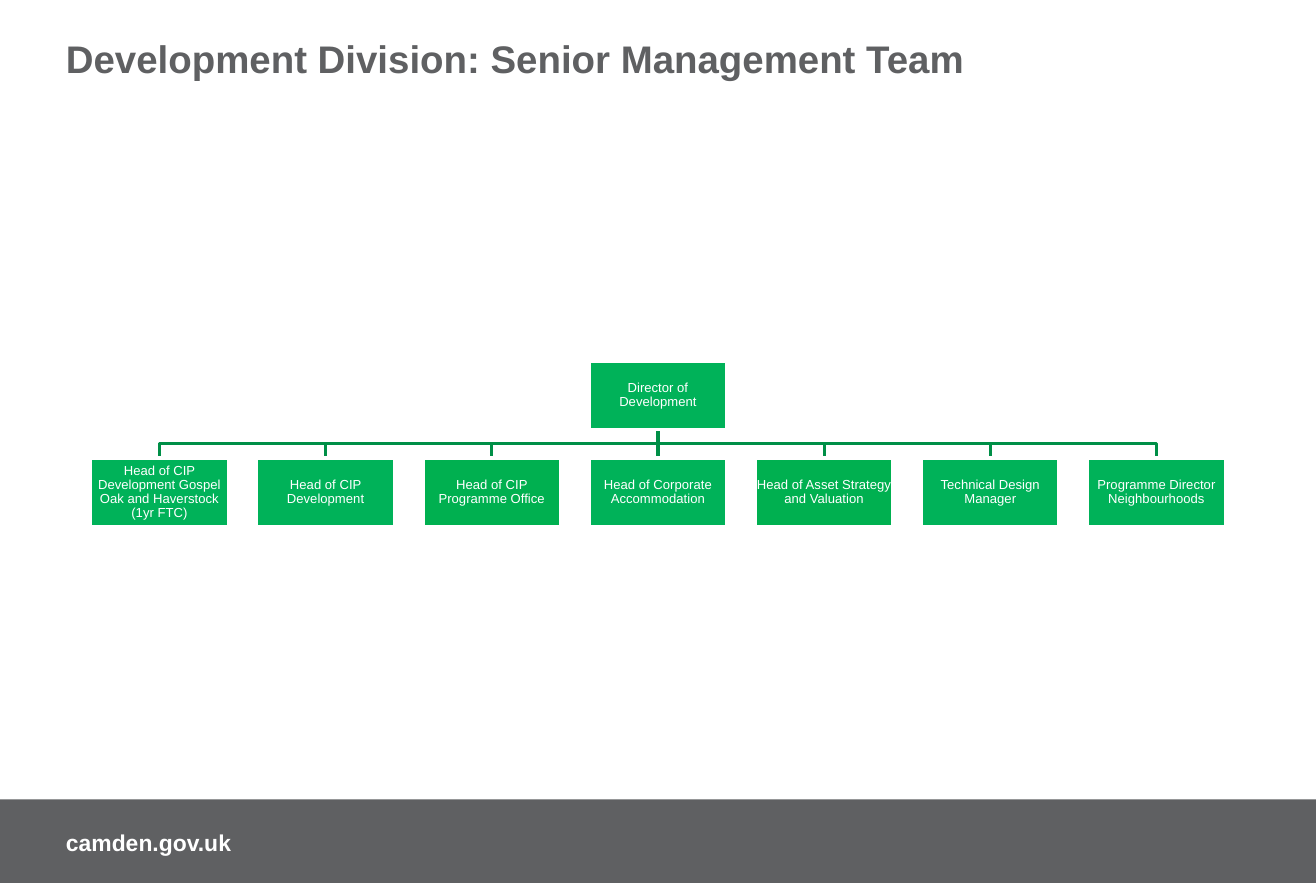
from lxml import etree
from pptx import Presentation
from pptx.dml.color import RGBColor
from pptx.enum.shapes import MSO_CONNECTOR, MSO_SHAPE
from pptx.enum.text import MSO_ANCHOR, MSO_AUTO_SIZE, PP_ALIGN
from pptx.oxml.ns import qn
from pptx.util import Inches, Pt

RECTANGLE = MSO_SHAPE.RECTANGLE
STRAIGHT = MSO_CONNECTOR.STRAIGHT
TOP, MIDDLE = MSO_ANCHOR.TOP, MSO_ANCHOR.MIDDLE
LEFT, CENTER = PP_ALIGN.LEFT, PP_ALIGN.CENTER
NO_AUTOFIT = MSO_AUTO_SIZE.NONE

SLIDE_W, SLIDE_H = 11.18, 7.5
GREY, WHITE = "5F6062", "FFFFFF"
GREEN, BRIGHT_GREEN, DARK_GREEN = "00B259", "00B050", "008F47"

MARGIN = 0.56
POST_W, POST_H = 1.17, 0.58
DIRECTOR_TOP, HEADS_TOP = 3.07, 3.89
FIRST_LEFT, LAST_LEFT = 0.77, 9.24

HEADS = [
    ("Head of CIP Development Gospel Oak and Haverstock (1yr FTC)", GREEN),
    ("Head of CIP Development", GREEN),
    ("Head of CIP Programme Office", BRIGHT_GREEN),
    ("Head of Corporate Accommodation", GREEN),
    ("Head of Asset Strategy and Valuation", BRIGHT_GREEN),
    ("Technical Design Manager", GREEN),
    ("Programme Director Neighbourhoods", GREEN),
]


def color(hex_value):
    return RGBColor.from_string(hex_value)


class OrgSlide:
    """Holds the slide and the chart's style."""

    font_name = "Arial"
    line_width = Pt(2)

    def __init__(self, slide):
        self.shapes = slide.shapes

    def set_text(self, shape, text, size, hex_value, bold=False,
                 align=LEFT, anchor=TOP, inset=0):
        frame = shape.text_frame
        frame.text = text
        frame.word_wrap = True
        frame.auto_size = NO_AUTOFIT
        frame.vertical_anchor = anchor
        frame.margin_left = frame.margin_right = Inches(inset)
        frame.margin_top = frame.margin_bottom = Inches(inset)
        paragraph = frame.paragraphs[0]
        paragraph.alignment = align
        font = paragraph.runs[0].font
        font.name = self.font_name
        font.size = Pt(size)
        font.bold = bold
        font.color.rgb = color(hex_value)
        return paragraph

    def title(self, text):
        title = self.shapes.title
        title.left, title.top = Inches(MARGIN), Inches(0.3)
        title.width, title.height = Inches(10.06), Inches(1.25)
        self.set_text(title, text, 23.5, GREY, bold=True)

    def rectangle(self, left, top, width, height, fill):
        box = self.shapes.add_shape(
            RECTANGLE, Inches(left), Inches(top), Inches(width), Inches(height))
        box.shadow.inherit = False
        box.fill.solid()
        box.fill.fore_color.rgb = color(fill)
        box.line.fill.background()
        return box

    def footer(self, address):
        self.rectangle(0, 6.79, SLIDE_W, SLIDE_H - 6.79, GREY)
        box = self.shapes.add_textbox(
            Inches(MARGIN), Inches(7.04), Inches(4.61), Inches(0.24))
        self.set_text(box, address, 14, WHITE, bold=True)

    def post(self, left, top, role, fill):
        box = self.rectangle(left, top, POST_W, POST_H, fill)
        self.stroke(box.line, WHITE)
        paragraph = self.set_text(box, role, 8, WHITE, align=CENTER,
                                  anchor=MIDDLE, inset=0.01)
        paragraph.line_spacing = 0.9

    def branch(self, start_x, start_y, end_x, end_y):
        """Draw a reporting line, bent halfway down unless it is vertical."""
        if abs(start_x - end_x) < 0.01:
            line = self.shapes.add_connector(
                STRAIGHT, Inches(start_x), Inches(start_y),
                Inches(start_x), Inches(end_y))
            etree.SubElement(line._element.spPr, qn("a:effectLst"))
        else:
            bend_y = (start_y + end_y) / 2
            builder = self.shapes.build_freeform(
                Inches(start_x), Inches(start_y))
            corners = [(start_x, bend_y), (end_x, bend_y), (end_x, end_y)]
            builder.add_line_segments(
                [(Inches(x), Inches(y)) for x, y in corners], close=False)
            line = builder.convert_to_shape()
            line.shadow.inherit = False
            line.fill.background()
        self.stroke(line.line, DARK_GREEN)

    def stroke(self, line, hex_value):
        line.color.rgb = color(hex_value)
        line.width = self.line_width


def main():
    deck = Presentation()
    deck.slide_width, deck.slide_height = Inches(SLIDE_W), Inches(SLIDE_H)
    page = OrgSlide(deck.slides.add_slide(deck.slide_layouts[5]))

    page.footer("camden.gov.uk")
    page.title("Development Division: Senior Management Team")

    step = (LAST_LEFT - FIRST_LEFT) / (len(HEADS) - 1)
    head_lefts = [FIRST_LEFT + index * step for index in range(len(HEADS))]
    director_left = (FIRST_LEFT + LAST_LEFT) / 2
    half = POST_W / 2

    for left in head_lefts:
        page.branch(director_left + half, DIRECTOR_TOP + POST_H,
                    left + half, HEADS_TOP)
    page.post(director_left, DIRECTOR_TOP, "Director of Development", GREEN)
    for left, (role, fill) in zip(head_lefts, HEADS):
        page.post(left, HEADS_TOP, role, fill)

    deck.save("out.pptx")


if __name__ == "__main__":
    main()
